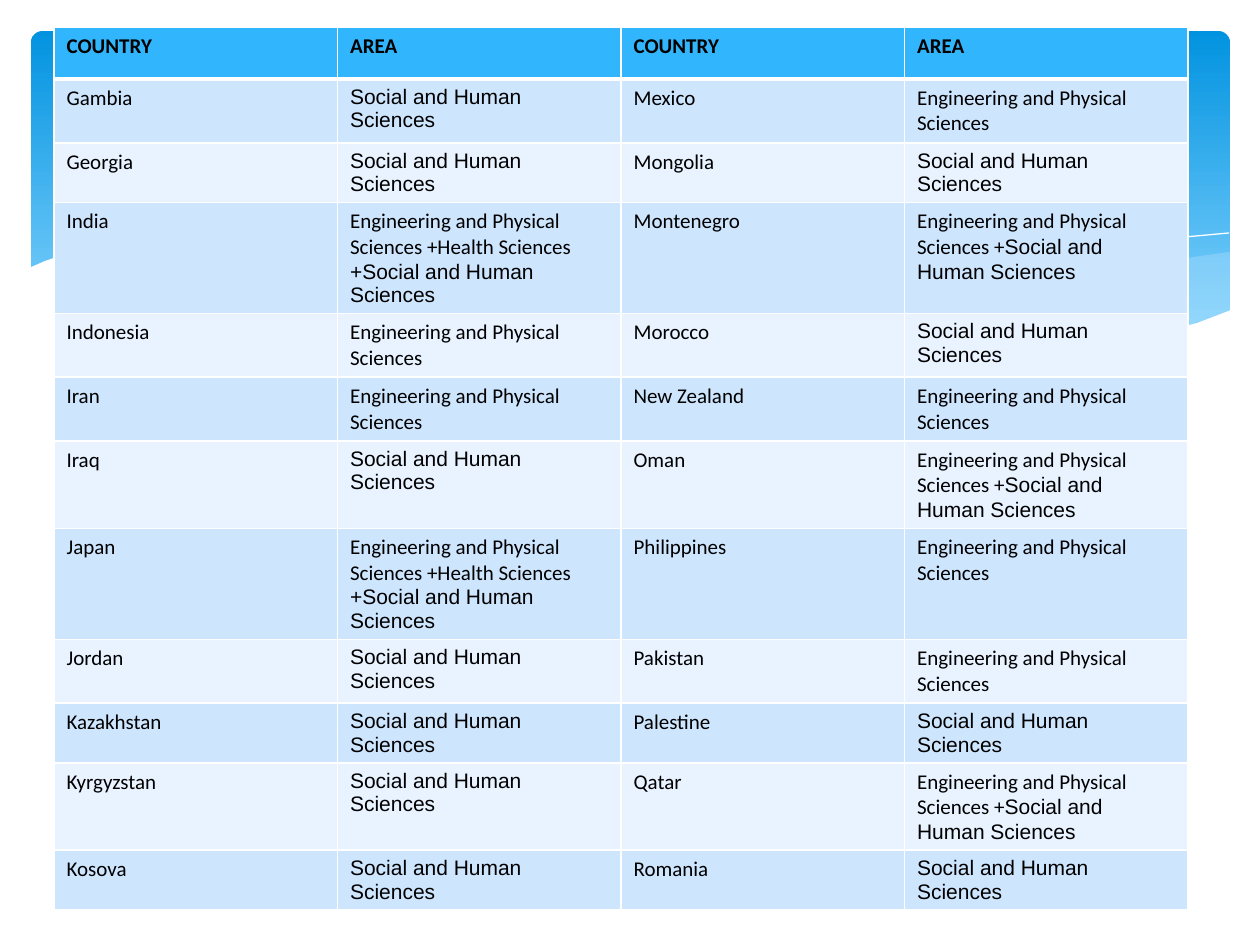
from dataclasses import dataclass

from lxml import etree
from pptx import Presentation
from pptx.dml.color import RGBColor
from pptx.enum.shapes import MSO_SHAPE
from pptx.oxml.ns import qn
from pptx.util import Emu, Pt

ROUND = MSO_SHAPE.ROUNDED_RECTANGLE
SCALE = 914400 / 126


@dataclass(frozen=True)
class Theme:
    white: str = "FFFFFF"
    black: str = "000000"
    deep: str = "0293E0"
    sky: str = "83D3FE"
    mist: str = "C6E7FC"
    head: str = "31B6FD"
    bands: tuple = ("CEE5FE", "E8F3FF")
    body: str = "Calibri"
    alt: str = "Arial"
    size: int = 12
    thin: int = 1
    thick: int = 3


def px(n):
    return Emu(round(n * SCALE))


def rgb(code):
    return RGBColor.from_string(code)


class Board:
    def __init__(self, theme, slide):
        self.theme = theme
        self.slide = slide

    def panel(self, x, y, w, h):
        shape = self.slide.shapes.add_shape(ROUND, px(x), px(y), px(w), px(h))
        shape.shadow.inherit = False
        shape.adjustments[0] = 0.034
        shape.line.fill.background()
        shape.fill.gradient()
        shape.fill.gradient_angle = 270
        stops = shape.fill.gradient_stops
        for stop, code, spot in zip(stops, (self.theme.deep, self.theme.sky), (0, 0.9)):
            stop.color.rgb = rgb(code)
            stop.position = spot

    def outline(self, points, closed):
        first, *rest = points
        path = self.slide.shapes.build_freeform(px(first[0]), px(first[1]))
        path.add_line_segments([(px(x), px(y)) for x, y in rest], close=closed)
        shape = path.convert_to_shape()
        shape.shadow.inherit = False
        return shape

    def wave(self, points, code, alpha=100):
        shape = self.outline(points, True)
        shape.line.fill.background()
        shape.fill.solid()
        shape.fill.fore_color.rgb = rgb(code)
        if alpha < 100:
            color = shape.fill._xPr.find(qn("a:solidFill"))[0]
            etree.SubElement(color, qn("a:alpha"), val=str(alpha * 1000))

    def curve(self, points):
        shape = self.outline(points, False)
        shape.fill.background()
        shape.line.color.rgb = rgb(self.theme.white)
        shape.line.width = Pt(0)

    def edge(self, cell, side, width):
        props = cell._tc.get_or_add_tcPr()
        line = etree.SubElement(props, qn("a:ln" + side), w=str(Pt(width)))
        fill = etree.SubElement(line, qn("a:solidFill"))
        etree.SubElement(fill, qn("a:srgbClr"), val=self.theme.white)

    def cell(self, cell, paras, code, bold, top, bottom):
        for side, width in zip("LRTB", (self.theme.thin, self.theme.thin, top, bottom)):
            self.edge(cell, side, width)
        cell.fill.solid()
        cell.fill.fore_color.rgb = rgb(code)
        frame = cell.text_frame
        for i, runs in enumerate(paras):
            para = frame.add_paragraph() if i else frame.paragraphs[0]
            for text, face in runs:
                run = para.add_run()
                run.text = text
                run.font.name = face
                run.font.size = Pt(self.theme.size)
                run.font.bold = bold
                run.font.color.rgb = rgb(self.theme.black)

    def table(self, x, y, w, h, rows, tall):
        theme = self.theme
        count = len(rows[0])
        frame = self.slide.shapes.add_table(len(rows), count, px(x), px(y), px(w), px(h))
        grid = frame.table
        for r, row in enumerate(rows):
            grid.rows[r].height = px(tall)
            code = theme.bands[(r - 1) % 2] if r else theme.head
            top = theme.thick if r == 1 else theme.thin
            bottom = theme.thin if r else theme.thick
            for c, paras in enumerate(row):
                self.cell(grid.cell(r, c), paras, code, r == 0, top, bottom)
        frame.height = px(h)


THEME = Theme()


def plain(text):
    return [[(text, THEME.body)]]


ENG = "Engineering and Physical Sciences"
SOC = "Social and Human Sciences"
TECH = plain(ENG)
HUMAN = [[(SOC, THEME.alt)]]
BOTH = [[(ENG + " +", THEME.body), (SOC, THEME.alt)]]
ALL = [[(ENG + " +Health Sciences", THEME.body)], [("+" + SOC, THEME.alt)]]

AREAS = [
    ("Gambia", HUMAN, "Mexico", TECH),
    ("Georgia", HUMAN, "Mongolia", HUMAN),
    ("India", ALL, "Montenegro", BOTH),
    ("Indonesia", TECH, "Morocco", HUMAN),
    ("Iran", TECH, "New Zealand", TECH),
    ("Iraq", HUMAN, "Oman", BOTH),
    ("Japan", ALL, "Philippines", TECH),
    ("Jordan", HUMAN, "Pakistan", TECH),
    ("Kazakhstan", HUMAN, "Palestine", HUMAN),
    ("Kyrgyzstan", HUMAN, "Qatar", BOTH),
    ("Kosova", HUMAN, "Romania", HUMAN),
]

RIGHT = [
    (1229, 252), (1194, 257), (1142, 268), (1085, 281), (982, 305), (890, 324),
    (833, 334), (888, 341), (954, 348), (1026, 350), (1087, 347), (1140, 339),
    (1187, 326), (1230, 311), (1230, 252),
]
MIDDLE = [
    (1125, 344), (1055, 334), (976, 320), (890, 302), (793, 280), (717, 262),
    (648, 249), (586, 241), (529, 236), (455, 233), (394, 237), (360, 241),
    (431, 251), (509, 266), (566, 280), (668, 302), (757, 321), (838, 335),
    (910, 345), (989, 350), (1056, 350),
]
FALL = [
    (389, 246), (433, 239), (505, 236), (591, 238), (672, 244), (766, 257),
    (876, 276), (1002, 304), (1143, 343),
]
RISE = [(772, 324), (876, 296), (978, 272), (1091, 251), (1164, 239), (1229, 233)]
FRONT = [
    (1231, 310), (1197, 323), (1147, 336), (1087, 345), (1019, 349), (937, 345),
    (842, 334), (730, 315), (634, 294), (563, 277), (460, 255), (368, 239),
    (290, 233), (223, 232), (166, 234), (120, 241), (74, 251), (45, 261),
    (29, 268), (29, 415), (1231, 415),
]


def main():
    deck = Presentation()
    deck.slide_width, deck.slide_height = px(1260), px(945)
    board = Board(THEME, deck.slides.add_slide(deck.slide_layouts[6]))
    board.panel(31, 31, 1199, 340)
    board.wave(RIGHT, THEME.mist, 29)
    board.wave(MIDDLE, THEME.mist, 40)
    board.curve(FALL)
    board.curve(RISE)
    board.wave(FRONT, THEME.white)
    rows = [[plain(name) for name in ("COUNTRY", "AREA") * 2]]
    for left, area, right, other in AREAS:
        rows.append([plain(left), area, plain(right), other])
    board.table(54, 27, 1134, 834, rows, 52)
    deck.save("out.pptx")


if __name__ == "__main__":
    main()
